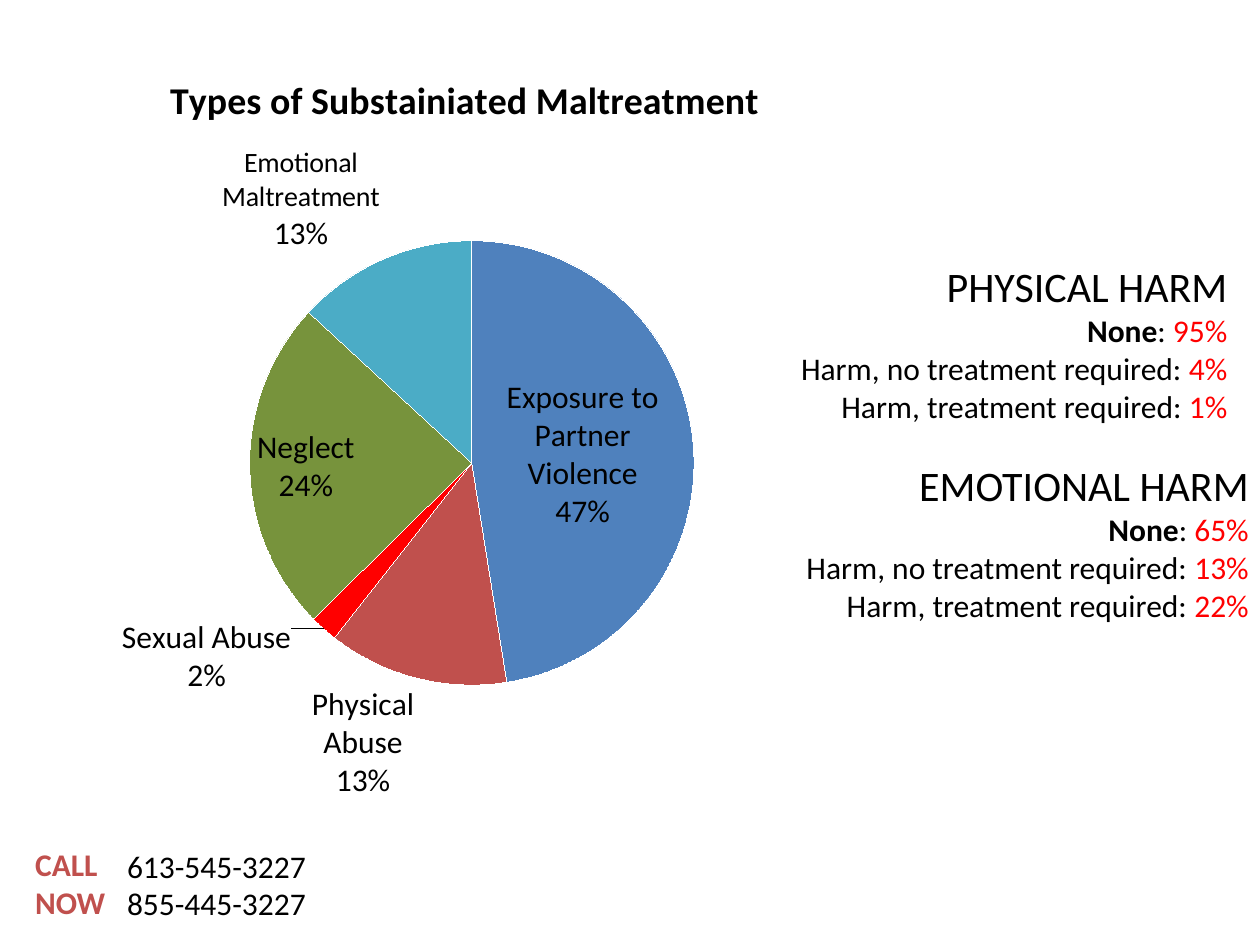
from lxml import etree
from pptx import Presentation
from pptx.chart import data as chart_data
from pptx.dml.color import RGBColor
from pptx.enum import chart as ch, text
from pptx.oxml import ns
from pptx.util import Pt

# Content
BLACK, RED, BRICK = "000000", "FF0000", "C0504D"
FONT = "Calibri"
TITLE = "Types of Substainiated Maltreatment"
POSITION = ch.XL_LABEL_POSITION
SLICES = [  # category, percent, colour, label position
    ("Exposure to Partner Violence", 47, "4F81BD", POSITION.CENTER),
    ("Physical Abuse", 13, BRICK, POSITION.OUTSIDE_END),
    ("Sexual Abuse", 2, RED, POSITION.OUTSIDE_END),
    ("Neglect", 24, "77933C", POSITION.INSIDE_END),
    ("Emotional Maltreatment", 13, "4BACC6", POSITION.OUTSIDE_END),
]
HARMS = [  # heading, percentages, left, top
    ("PHYSICAL HARM", ("95%", "4%", "1%"), 427.7, 145.4),
    ("EMOTIONAL HARM", ("65%", "13%", "22%"), 439.9, 259.2),
]
CONTACTS = [  # lines, left, top, width, format
    (("613-545-3227", "855-445-3227"), 65.5, 480.2, 118.8, {}),
    (("CALL", "NOW"), 13, 479.5, 67.7, {"color": BRICK, "bold": True}),
]


def format_font(font, size=18, color=BLACK, bold=False):
    font.name, font.size, font.bold = FONT, Pt(size), bold
    font.color.rgb = RGBColor.from_string(color)


def add_run(paragraph, words, **style):
    run = paragraph.add_run()
    run.text = words
    format_font(run.font, **style)


def add_text(slide, lines, left, top, width, height, align=text.PP_ALIGN.LEFT):
    """Each line is a list of (words, format) runs."""
    frame = slide.shapes.add_textbox(Pt(left), Pt(top), Pt(width), Pt(height)).text_frame
    frame.word_wrap = True
    for number, line in enumerate(lines):
        paragraph = frame.add_paragraph() if number else frame.paragraphs[0]
        paragraph.alignment = align
        for words, style in line:
            add_run(paragraph, words, **style)


def add_layout(parent, index, **values):
    """Place a chart part by fractions of the chart's size."""
    for old in parent.findall(ns.qn("c:layout")):
        parent.remove(old)
    layout = etree.Element(ns.qn("c:layout"))
    manual = etree.SubElement(layout, ns.qn("c:manualLayout"))
    for tag, value in values.items():
        etree.SubElement(manual, ns.qn("c:" + tag)).set("val", str(value))
    parent.insert(index, layout)


def show_category_and_percent(element):
    for tag in ("showVal", "showCatName", "showPercent"):
        element.find(ns.qn("c:" + tag)).set("val", "0" if tag == "showVal" else "1")
    separator = etree.Element(ns.qn("c:separator"))
    separator.text = "\n"
    element.find(ns.qn("c:showBubbleSize")).addnext(separator)


presentation = Presentation()
presentation.slide_width, presentation.slide_height = Pt(720), Pt(540)
slide = presentation.slides.add_slide(presentation.slide_layouts[6])

# Telephone numbers
for lines, left, top, width, style in CONTACTS:
    add_text(slide, [[(line, style)] for line in lines], left, top, width, 51)

# Pie chart
pie_data = chart_data.CategoryChartData()
pie_data.categories = [name for name, *_ in SLICES]
pie_data.add_series("Series 1", [percent for _, percent, *_ in SLICES])
chart = slide.shapes.add_chart(ch.XL_CHART_TYPE.PIE, Pt(-1.4), Pt(15.1), Pt(526.3),
                               Pt(453.6), pie_data).chart
format_font(chart.font)
chart.has_legend = False
chart.has_title = True
add_run(chart.chart_title.text_frame.paragraphs[0], TITLE, size=21.6, bold=True)
add_layout(chart.chart_title._element, 1, xMode="edge", yMode="edge", x=0.18, y=0.05)
plot_area = chart._chartSpace.chart.plotArea
add_layout(plot_area, 0, layoutTarget="inner", xMode="edge", yMode="edge",
           x=0.27, y=0.27, w=0.49, h=0.56)

# Slices and their labels
series = chart.plots[0].series[0]
labels = series.data_labels
format_font(labels.font)
show_category_and_percent(labels._element)
for number, (name, percent, color, position) in enumerate(SLICES):
    point = series.points[number]
    point.format.fill.solid()
    point.format.fill.fore_color.rgb = RGBColor.from_string(color)
    point.format.line.color.rgb = RGBColor.from_string("FFFFFF")
    label = point.data_label
    if name == "Emotional Maltreatment":
        frame = label.text_frame
        add_run(frame.paragraphs[0], name, size=16)
        add_run(frame.add_paragraph(), f"{percent}%")
    else:
        format_font(label.font)
    label.position = position
    element = labels._element.findall(ns.qn("c:dLbl"))[number]
    show_category_and_percent(element)
    if name == "Sexual Abuse":
        add_layout(element, 1, x=-0.03, y=-0.02)

# Harm figures
for heading, (none, untreated, treated), left, top in HARMS:
    red = {"color": RED}
    add_text(slide, [
        [(heading, {"size": 24})],
        [("None", {"bold": True}), (": ", {}), (none, red)],
        [("Harm, no treatment required:", {}), (" " + untreated, red)],
        [("Harm, treatment required: ", {}), (treated, red)],
    ], left, top, 280.8, 101.5, align=text.PP_ALIGN.RIGHT)

presentation.save("out.pptx")
